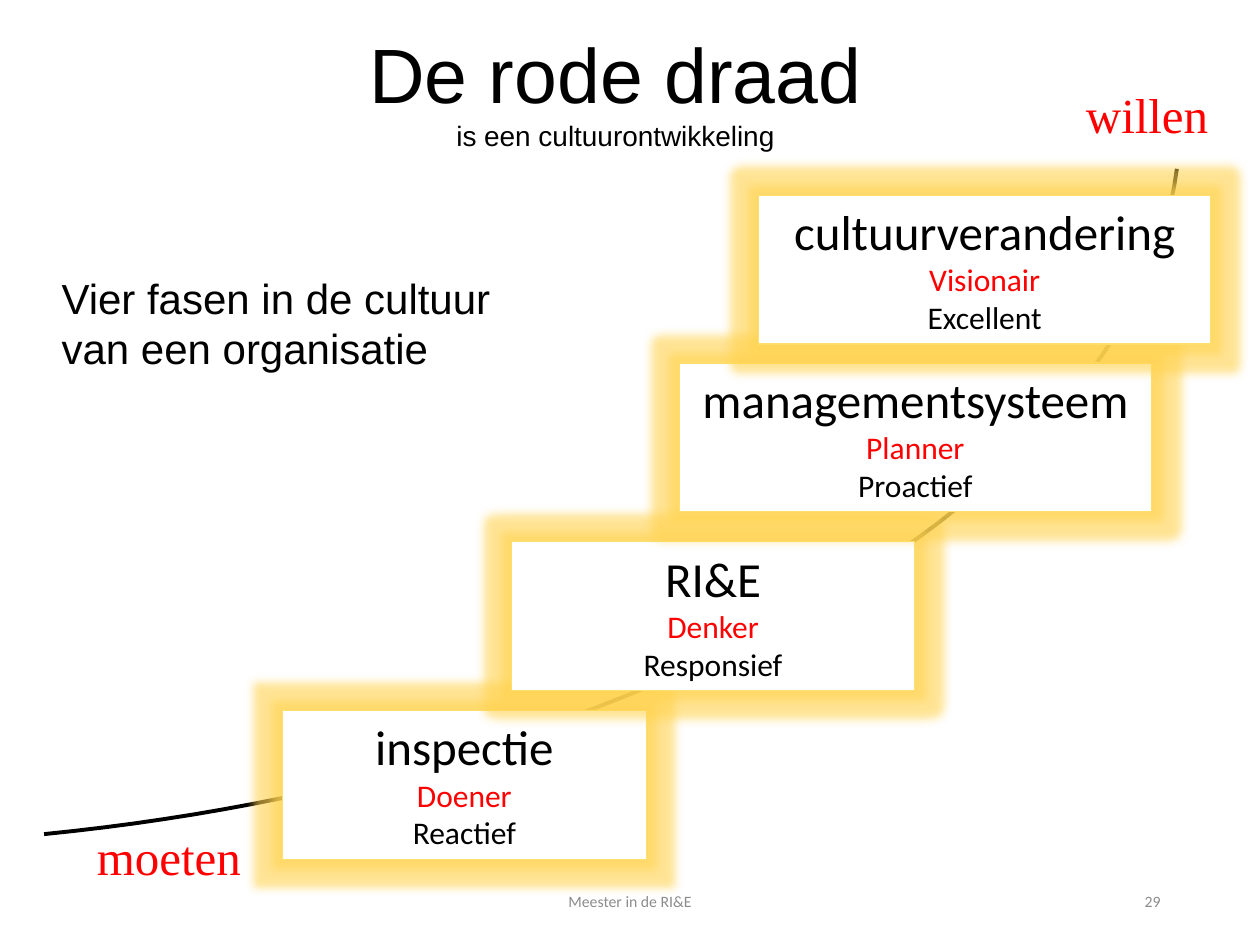
from lxml import etree
from pptx import Presentation
from pptx.dml.color import RGBColor
from pptx.enum.shapes import MSO_SHAPE
from pptx.enum.text import MSO_ANCHOR, MSO_AUTO_SIZE, PP_ALIGN
from pptx.oxml.ns import qn
from pptx.util import Inches, Pt

COLORS = {"black": "000000", "white": "FFFFFF", "red": "FF0000",
          "gold": "FFDF6B", "gray": "8C8C8C"}


def color(name):
    return RGBColor.from_string(COLORS[name])


def write(shape, lines, font, align=PP_ALIGN.LEFT, anchor=MSO_ANCHOR.TOP):
    frame = shape.text_frame
    frame.word_wrap = True
    frame.auto_size = MSO_AUTO_SIZE.NONE
    frame.vertical_anchor = anchor
    frame.margin_left = frame.margin_right = Inches(0.1)
    frame.margin_top = frame.margin_bottom = Inches(0.05)
    frame.text = "\n".join(text for text, size, shade in lines)
    for paragraph, (text, size, shade) in zip(frame.paragraphs, lines):
        paragraph.alignment = align
        paragraph.line_spacing = 1.0
        paragraph.space_before = Pt(0)
        run_font = paragraph.runs[0].font
        run_font.name = font
        run_font.size = Pt(size)
        run_font.color.rgb = color(shade)


prs = Presentation()
prs.slide_width, prs.slide_height = Inches(10), Inches(7.5)
slide = prs.slides.add_slide(prs.slide_layouts[5])
shapes = slide.shapes

title = shapes.title
title.left, title.top = Inches(1.41), Inches(0.16)
title.width, title.height = Inches(6.95), Inches(1.11)
write(title, [("De rode draad", 44, "black"),
              ("is een cultuurontwikkeling", 16, "black")],
      "Arial", PP_ALIGN.CENTER)

bezier = [(0.35, 6.62), (5.18, 6.14), (9.01, 3.9), (9.34, 1.34)]
steps = 60
growth_points = []
for step in range(steps + 1):
    t = step / steps
    weights = [(1 - t) ** 3, 3 * t * (1 - t) ** 2, 3 * t ** 2 * (1 - t), t ** 3]
    growth_points.append(tuple(
        Inches(sum(w * point[axis] for w, point in zip(weights, bezier)))
        for axis in (0, 1)))
builder = shapes.build_freeform(*growth_points[0])
builder.add_line_segments(growth_points[1:], close=False)
growth_curve = builder.convert_to_shape()
growth_curve.shadow.inherit = False
growth_curve.fill.background()
growth_curve.line.color.rgb = color("black")
growth_curve.line.width = Pt(2.25)

phases = [
    (2.24, 5.64, 2.89, "inspectie", "Doener", "Reactief"),
    (4.06, 4.3, 3.2, "RI&E", "Denker", "Responsief"),
    (5.39, 2.88, 3.75, "managementsysteem", "Planner", "Proactief"),
    (6.02, 1.55, 3.59, "cultuurverandering", "Visionair", "Excellent"),
]
for left, top, width, phase, role, attitude in phases:
    box = shapes.add_shape(MSO_SHAPE.RECTANGLE, Inches(left), Inches(top),
                           Inches(width), Inches(1.18))
    box.fill.solid()
    box.fill.fore_color.rgb = color("white")
    box.line.color.rgb = color("gold")
    box.line.width = Pt(0.75)
    box.shadow.inherit = False
    effects = box._element.spPr.find(qn("a:effectLst"))
    glow = etree.SubElement(effects, qn("a:glow"), rad=str(Inches(0.15)))
    glow_color = etree.SubElement(glow, qn("a:srgbClr"), val="FFD34F")
    etree.SubElement(glow_color, qn("a:alpha"), val="60000")
    write(box, [(phase, 28, "black"), (role, 18, "red"), (attitude, 18, "black")],
          "Calibri", PP_ALIGN.CENTER)

labels = [
    (0.67, 6.51, 1.48, 0.57, [("moeten", 28, "red")],
     "Times New Roman", PP_ALIGN.LEFT, MSO_ANCHOR.TOP),
    (8.52, 0.62, 1.25, 0.57, [("willen", 28, "red")],
     "Times New Roman", PP_ALIGN.LEFT, MSO_ANCHOR.TOP),
    (0.39, 2.11, 4.81, 0.91, [("Vier fasen in de cultuur", 24, "black"),
                              ("van een organisatie", 24, "black")],
     "Arial", PP_ALIGN.LEFT, MSO_ANCHOR.TOP),
    (3.31, 6.95, 3.38, 0.4, [("Meester in de RI&E", 9, "gray")],
     "Calibri", PP_ALIGN.CENTER, MSO_ANCHOR.MIDDLE),
    (7.06, 6.95, 2.25, 0.4, [("29", 9, "gray")],
     "Calibri", PP_ALIGN.RIGHT, MSO_ANCHOR.MIDDLE),
]
for left, top, width, height, lines, font, align, anchor in labels:
    label = shapes.add_textbox(Inches(left), Inches(top), Inches(width), Inches(height))
    write(label, lines, font, align, anchor)

prs.save("out.pptx")
